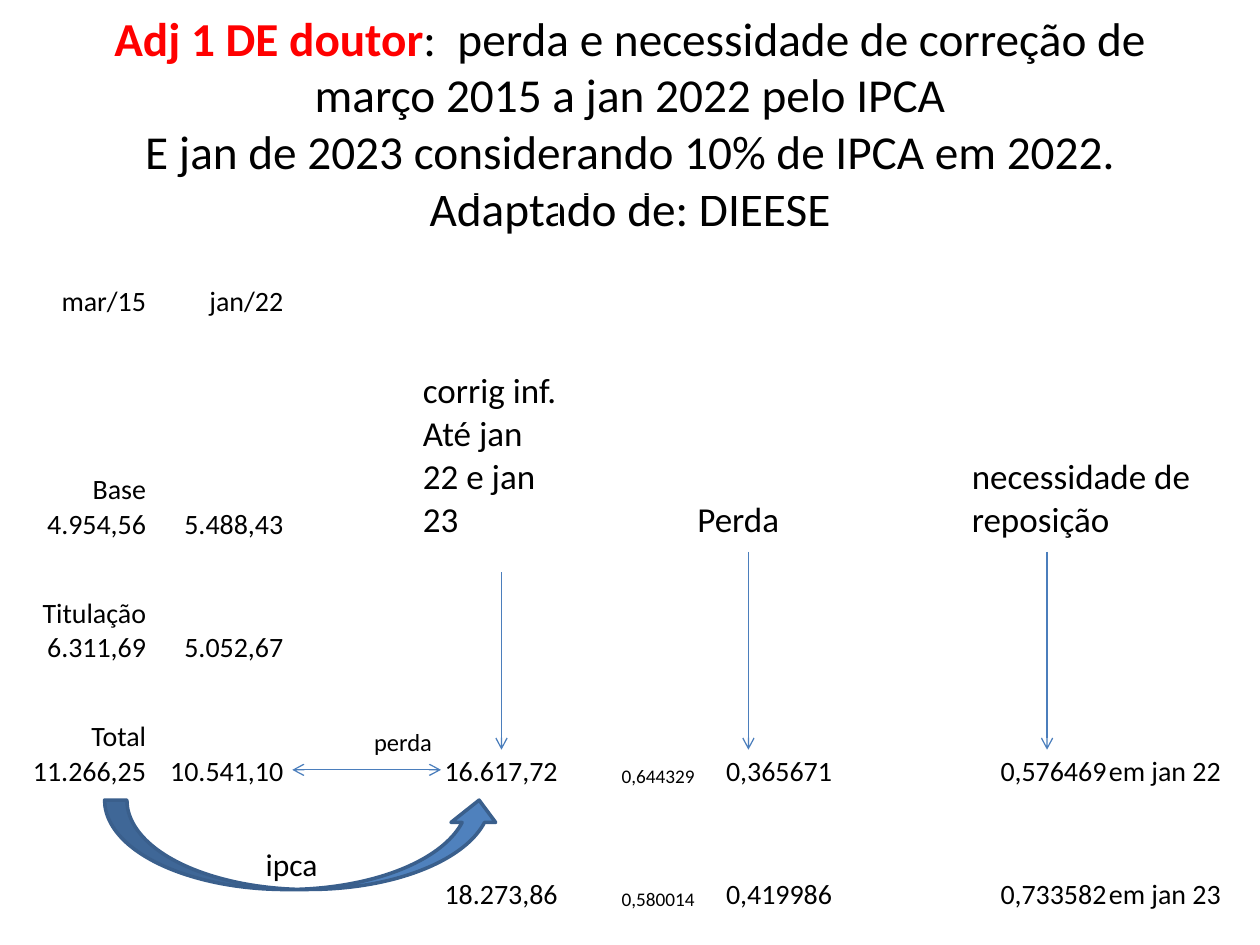
from dataclasses import dataclass

from lxml.etree import SubElement
from pptx import Presentation
from pptx.dml.color import RGBColor
from pptx.enum.shapes import MSO_CONNECTOR, MSO_SHAPE
from pptx.enum.text import MSO_ANCHOR, MSO_AUTO_SIZE, PP_ALIGN
from pptx.oxml.ns import qn
from pptx.util import Inches, Pt

COLORS = {"text": "000000", "accent": "FF0000", "line": "4B7EBC",
          "fill": "4F81BD", "outline": "3A5F8C"}
FONT = "Calibri"
UNIT = 0.1
COLUMNS, ROWS = 100, 75
TABLE_COLUMN = 10.89
ROW_HEIGHTS = [9.8, 17.7, 9.8, 9.8, 9.8]


@dataclass
class Box:
    left: float
    top: float
    width: float
    height: float

    def lengths(self) -> list:
        return [grid(n) for n in (self.left, self.top, self.width, self.height)]


@dataclass
class Entry:
    row: int
    column: int
    text: str
    size: int = 16
    align: PP_ALIGN = PP_ALIGN.RIGHT


@dataclass
class Arrow:
    start: tuple
    end: tuple
    double: bool = False


@dataclass
class Label:
    box: Box
    text: str
    size: int


LEFT = PP_ALIGN.LEFT
ENTRIES = [
    Entry(0, 0, "mar/15"), Entry(0, 1, "jan/22"),
    Entry(1, 0, "Base 4.954,56"), Entry(1, 1, "5.488,43"),
    Entry(1, 3, "corrig inf. Até jan 22 e jan 23", 20, LEFT),
    Entry(1, 5, "Perda", 20, LEFT),
    Entry(1, 7, "necessidade de reposição", 20, LEFT),
    Entry(2, 0, "Titulação 6.311,69"), Entry(2, 1, "5.052,67"),
    Entry(3, 0, "Total 11.266,25"), Entry(3, 1, "10.541,10"),
    Entry(3, 3, "16.617,72"), Entry(3, 4, "0,644329", 11),
    Entry(3, 5, "0,365671"), Entry(3, 7, "0,576469"),
    Entry(3, 8, "em jan 22", align=LEFT),
    Entry(4, 3, "18.273,86"), Entry(4, 4, "0,580014", 11),
    Entry(4, 5, "0,419986"), Entry(4, 7, "0,733582"),
    Entry(4, 8, "em jan 23", align=LEFT),
]
ARROWS = [
    Arrow((39.8, 45.4), (39.8, 59.5)),
    Arrow((59.4, 43.8), (59.4, 59.5)),
    Arrow((83.1, 43.8), (83.1, 59.5)),
    Arrow((23.2, 61.1), (35, 61.1), double=True),
]
LABELS = [Label(Box(20.1, 66.6, 8.7, 4), "ipca", 18),
          Label(Box(28.7, 57.2, 7.9, 3.4), "perda", 14)]


def grid(count: float) -> int:
    return Inches(count * UNIT)


def color(name: str) -> RGBColor:
    return RGBColor.from_string(COLORS[name])


def write(para, text: str, *, size: float, name: str = "text",
          bold: bool = False, align: PP_ALIGN = LEFT) -> None:
    para.alignment = align
    span = para.add_run()
    span.text = text
    span.font.name = FONT
    span.font.size = Pt(size)
    span.font.bold = bold
    span.font.color.rgb = color(name)


def draw_title(page) -> None:
    title = page.shapes.title
    title.left, title.top, title.width, title.height = Box(5, 0, 90, 19.4).lengths()
    frame = title.text_frame
    frame.word_wrap = True
    frame.auto_size = MSO_AUTO_SIZE.NONE
    frame.vertical_anchor = MSO_ANCHOR.MIDDLE
    para = frame.paragraphs[0]
    style = {"size": 27, "align": PP_ALIGN.CENTER}
    write(para, "Adj 1 DE doutor", name="accent", bold=True, **style)
    write(para, ":  perda e necessidade de correção de março 2015 a jan 2022 pelo IPCA", **style)
    para.add_line_break()
    write(para, "E jan de 2023 considerando 10% de IPCA em 2022. Adaptado de: DIEESE", **style)


def draw_table(page) -> None:
    box = Box(0.8, 15.5, 9 * TABLE_COLUMN, sum(ROW_HEIGHTS))
    table = page.shapes.add_table(len(ROW_HEIGHTS), 9, *box.lengths()).table
    table.first_row = table.horz_banding = False
    for column in table.columns:
        column.width = grid(TABLE_COLUMN)
    for row, height in zip(table.rows, ROW_HEIGHTS):
        row.height = grid(height)
    for cell in table.iter_cells():
        cell.fill.background()
    table.cell(1, 7).merge(table.cell(1, 8))
    for entry in ENTRIES:
        cell = table.cell(entry.row, entry.column)
        cell.margin_left = cell.margin_right = cell.margin_top = Inches(0.01)
        cell.margin_bottom = 0
        cell.vertical_anchor = MSO_ANCHOR.BOTTOM
        write(cell.text_frame.paragraphs[0], entry.text, size=entry.size, align=entry.align)


def draw_arrow(page, arrow: Arrow) -> None:
    points = [grid(n) for n in (*arrow.start, *arrow.end)]
    connector = page.shapes.add_connector(MSO_CONNECTOR.STRAIGHT, *points)
    connector.line.color.rgb = color("line")
    connector.line.width = Pt(0.75)
    line = connector.line._get_or_add_ln()
    for end in ("a:headEnd", "a:tailEnd") if arrow.double else ("a:tailEnd",):
        SubElement(line, qn(end), type="arrow")
    SubElement(connector._element.spPr, qn("a:effectLst"))


def draw_curve(page, box: Box) -> None:
    shape = page.shapes.add_shape(MSO_SHAPE.CURVED_UP_ARROW, *box.lengths())
    shape.shadow.inherit = False
    shape.fill.solid()
    shape.fill.fore_color.rgb = color("fill")
    shape.line.color.rgb = color("outline")
    shape.line.width = Pt(2)


def draw_label(page, label: Label) -> None:
    frame = page.shapes.add_textbox(*label.box.lengths()).text_frame
    frame.word_wrap = True
    frame.auto_size = MSO_AUTO_SIZE.SHAPE_TO_FIT_TEXT
    write(frame.paragraphs[0], label.text, size=label.size)


def main() -> None:
    deck = Presentation()
    deck.slide_width, deck.slide_height = grid(COLUMNS), grid(ROWS)
    page = deck.slides.add_slide(deck.slide_layouts[5])
    draw_title(page)
    draw_table(page)
    for arrow in ARROWS:
        draw_arrow(page, arrow)
    draw_curve(page, Box(8.3, 63.5, 31.5, 7.1))
    for label in LABELS:
        draw_label(page, label)
    deck.save("out.pptx")


if __name__ == "__main__":
    main()
